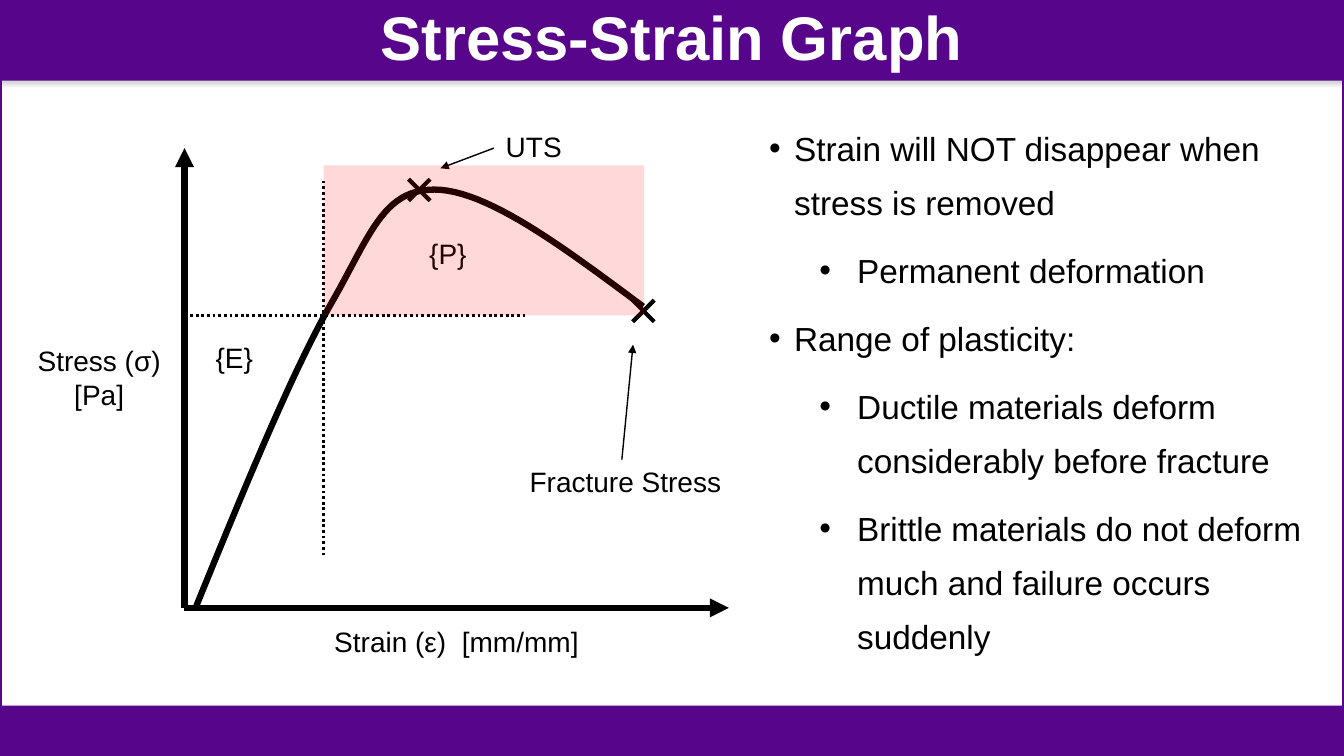
from lxml import etree
from pptx import Presentation
from pptx.dml.color import RGBColor
from pptx.enum.dml import MSO_LINE
from pptx.enum.shapes import MSO_CONNECTOR, MSO_SHAPE
from pptx.enum.text import MSO_ANCHOR, MSO_AUTO_SIZE, PP_ALIGN
from pptx.oxml.ns import qn
from pptx.util import Pt

LEFT, CENTER = PP_ALIGN.LEFT, PP_ALIGN.CENTER
TOP, MIDDLE = MSO_ANCHOR.TOP, MSO_ANCHOR.MIDDLE
DOTTED = MSO_LINE.ROUND_DOT
RECTANGLE, STRAIGHT = MSO_SHAPE.RECTANGLE, MSO_CONNECTOR.STRAIGHT

WIDTH, HEIGHT = 960, 540
HEADER_HEIGHT, FOOTER_HEIGHT = 57.6, 36
FONT = "Arial"
COLORS = {
    "purple": "57068C",
    "white": "FFFFFF",
    "black": "000000",
    "red": "FF0000",
    "shadow": "808080",
}

ORIGIN = (131.8, 434.2)
YIELD = (231.1, 225.4)
FRACTURE = (459.6, 222.1)
UTS = (299.5, 135.7)
CURVE_START = (139.7, 434.2)
CURVE_PIECES = [
    [(173.5, 351.4), (207.4, 268.6), (235.4, 218.9)],
    [(264.2, 169.2), (272.9, 135.4), (310.3, 135.4)],
    [(347.8, 135.4), (403.2, 177.1), (459.4, 218.9)],
]
CURVE_STEPS = 24

BULLETS = [
    (0, "Strain will NOT disappear when stress is removed"),
    (1, "Permanent deformation"),
    (0, "Range of plasticity:"),
    (1, "Ductile materials deform considerably before fracture"),
    (1, "Brittle materials do not deform much and failure occurs suddenly"),
]
BULLET_INDENTS = [(18, -18), (63, -27)]


def rgb(name):
    return RGBColor.from_string(COLORS[name])


def add_child(parent, tag, **attributes):
    return etree.SubElement(parent, qn(tag), attributes)


def write_text(paragraph, text, size=20, color="black", bold=False, align=LEFT,
               line_spacing=None, space_before=0):
    paragraph.text = text
    paragraph.alignment = align
    paragraph.line_spacing = line_spacing
    paragraph.space_before = Pt(space_before)
    font = paragraph.runs[0].font
    font.name, font.size, font.bold = FONT, Pt(size), bold
    font.color.rgb = rgb(color)


def add_rectangle(slide, left, top, width, height, fill=None, line=None, alpha=None):
    shape = slide.shapes.add_shape(RECTANGLE, Pt(left), Pt(top), Pt(width), Pt(height))
    shape.shadow.inherit = False
    if fill:
        shape.fill.solid()
        shape.fill.fore_color.rgb = rgb(fill)
    else:
        shape.fill.background()
    if line:
        shape.line.color.rgb = rgb(line)
        shape.line.width = Pt(2.25)
    else:
        shape.line.fill.background()
    if alpha:
        color = shape.fill._xPr.find(".//" + qn("a:srgbClr"))
        add_child(color, "a:alpha", val=str(alpha * 1000))
    return shape


def add_bar(slide, top, height):
    """Add a full-width purple band with a soft shadow below it."""
    bar = add_rectangle(slide, 0, top, WIDTH, height, fill="purple")
    effects = bar._element.spPr.find(qn("a:effectLst"))
    shadow = add_child(effects, "a:outerShdw", blurRad=str(Pt(3.1)), dist=str(Pt(1.8)),
                       dir="5400000", rotWithShape="0")
    color = add_child(shadow, "a:srgbClr", val=COLORS["shadow"])
    add_child(color, "a:alpha", val="35000")


def add_line(slide, start, end, width, dash=None, arrow=False):
    connector = slide.shapes.add_connector(STRAIGHT, *map(Pt, start + end))
    add_child(connector._element.spPr, "a:effectLst")
    connector.line.color.rgb = rgb("black")
    connector.line.width = Pt(width)
    if dash:
        connector.line.dash_style = dash
    if arrow:
        add_child(connector.line._get_or_add_ln(), "a:tailEnd", type="triangle")


def add_cross(slide, center, reach=7.7):
    x, y = center
    for rise in (reach, -reach):
        add_line(slide, (x - reach, y - rise), (x + reach, y + rise), 3)


def add_label(slide, text, left, top, width, height, align=CENTER):
    box = slide.shapes.add_textbox(Pt(left), Pt(top), Pt(width), Pt(height))
    frame = box.text_frame
    frame.word_wrap = True
    frame.margin_left = Pt(7.2 if align == LEFT else 0)
    frame.margin_right = 0
    write_text(frame.paragraphs[0], text, align=align)


def bezier_points(start, first, second, end):
    """Return points along a cubic curve, without its start."""
    points = []
    for step in range(1, CURVE_STEPS + 1):
        t = step / CURVE_STEPS
        weights = ((1 - t) ** 3, 3 * t * (1 - t) ** 2, 3 * t ** 2 * (1 - t), t ** 3)
        points.append(tuple(
            sum(weight * value for weight, value in zip(weights, values))
            for values in zip(start, first, second, end)))
    return points


def add_curve(slide):
    points = [CURVE_START]
    for piece in CURVE_PIECES:
        points += bezier_points(points[-1], *piece)
    points = [(Pt(x), Pt(y)) for x, y in points]
    builder = slide.shapes.build_freeform(*points[0], scale=1.0)
    builder.add_line_segments(points[1:], close=False)
    curve = builder.convert_to_shape()
    curve.shadow.inherit = False
    curve.fill.background()
    curve.line.color.rgb = rgb("black")
    curve.line.width = Pt(4.5)


def add_title(slide):
    title = slide.shapes.title
    slide.shapes._spTree.append(title._element)  # bring in front of the header bar
    title.left, title.top, title.width, title.height = 0, 0, Pt(WIDTH), Pt(HEADER_HEIGHT)
    frame = title.text_frame
    frame.auto_size = MSO_AUTO_SIZE.NONE
    frame.vertical_anchor = MIDDLE
    write_text(frame.paragraphs[0], "Stress-Strain Graph", size=44, color="white",
               bold=True, align=CENTER, line_spacing=0.9)


def add_bullets(slide):
    box = slide.shapes.add_textbox(Pt(542.2), Pt(77.8), Pt(409), Pt(401.8))
    frame = box.text_frame
    frame.word_wrap = True
    frame.vertical_anchor = TOP
    for index, (level, text) in enumerate(BULLETS):
        paragraph = frame.add_paragraph() if index else frame.paragraphs[0]
        margin, indent = BULLET_INDENTS[level]
        properties = paragraph._p.get_or_add_pPr()
        properties.set("marL", str(Pt(margin)))
        properties.set("indent", str(Pt(indent)))
        add_child(properties, "a:buFont", typeface=FONT)
        add_child(properties, "a:buChar", char="•")
        write_text(paragraph, text, size=23.8, line_spacing=1.35,
                   space_before=10 if index else 0)


def add_graph(slide):
    add_label(slide, "Strain (ε)  [mm/mm]", 194.4, 442.8, 263.5, 31.7)
    add_curve(slide)
    add_line(slide, ORIGIN, (520.6, ORIGIN[1]), 4.5, arrow=True)
    add_line(slide, ORIGIN, (ORIGIN[0], 105.8), 4.5, arrow=True)
    add_line(slide, (ORIGIN[0], YIELD[1]), (375.8, YIELD[1]), 2, dash=DOTTED)
    add_line(slide, (YIELD[0], 396.7), (YIELD[0], 128.2), 2, dash=DOTTED)
    add_label(slide, "Stress (σ) [Pa]", 19.4, 241.9, 103, 55.4)
    add_label(slide, "Fracture Stress", 356.4, 328.3, 180.7, 31.7)
    add_label(slide, "UTS", 354.2, 89.3, 55.4, 31.7, align=LEFT)
    add_label(slide, "{P}", 299.5, 165.6, 52.6, 38.9, align=LEFT)
    add_label(slide, "{E}", 146.9, 239.8, 52.6, 38.9, align=LEFT)
    add_cross(slide, UTS)
    add_cross(slide, FRACTURE)
    add_line(slide, (444.2, 328.3), (452.2, 246.2), 1, arrow=True)
    add_line(slide, (352.8, 105.8), (314.6, 120.2), 1, arrow=True)


def main():
    presentation = Presentation()
    presentation.slide_width, presentation.slide_height = Pt(WIDTH), Pt(HEIGHT)
    slide = presentation.slides.add_slide(presentation.slide_layouts.get_by_name("Title Only"))
    add_bar(slide, 0, HEADER_HEIGHT)
    add_rectangle(slide, 0, 0, WIDTH, HEIGHT, line="purple")
    add_bar(slide, HEIGHT - FOOTER_HEIGHT, FOOTER_HEIGHT)
    add_title(slide)
    add_graph(slide)
    add_bullets(slide)
    add_rectangle(slide, YIELD[0], 118.1, 229, 107.3, fill="red", alpha=15)
    presentation.save("out.pptx")


if __name__ == "__main__":
    main()
